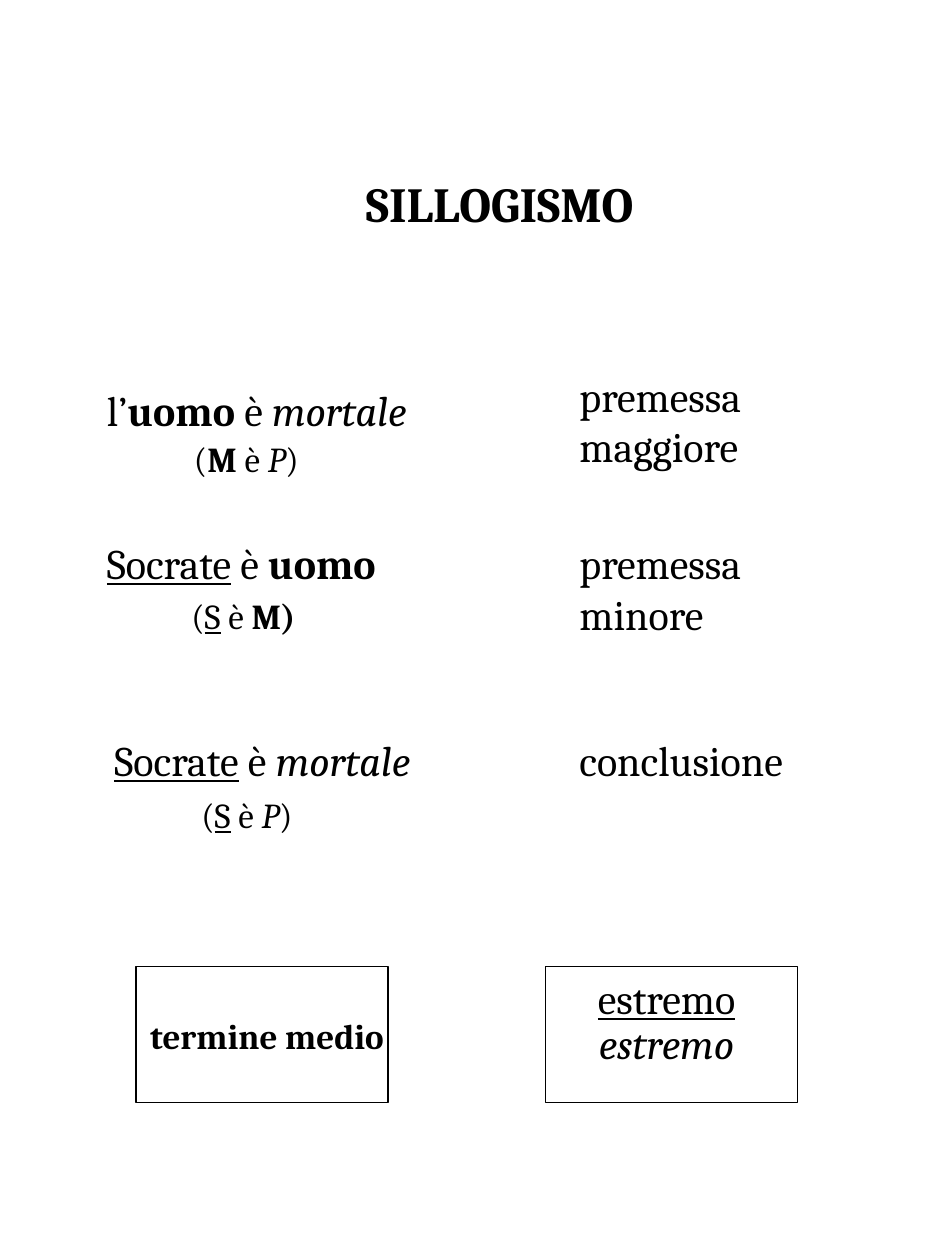
"""Build a one-page Italian slide that explains the syllogism."""
from dataclasses import dataclass

from pptx import Presentation
from pptx.dml.color import RGBColor
from pptx.enum.shapes import MSO_SHAPE as Preset
from pptx.enum.text import MSO_ANCHOR as Anchor
from pptx.enum.text import MSO_AUTO_SIZE as AutoSize
from pptx.enum.text import PP_ALIGN as Align
from pptx.util import Inches, Pt

FONT = "Cambria"
BLACK, WHITE = "000000", "FFFFFF"
LABEL_LEFT = 4.5
FRAME_TOP, FRAME_WIDTH, FRAME_HEIGHT = 7.67, 2, 1.08


@dataclass(frozen=True)
class Piece:
    text: str
    bold: bool = False
    italic: bool = False
    underline: bool = False


@dataclass(frozen=True)
class Caption:
    left: float
    top: float
    width: float
    height: float
    lines: tuple[tuple[Piece, ...], ...]
    size: int = 24
    align: Align = Align.LEFT


def middle(text: str) -> Piece:
    return Piece(text, bold=True)


def predicate(text: str) -> Piece:
    return Piece(text, italic=True)


def subject(text: str) -> Piece:
    return Piece(text, underline=True)


IS, OPEN, CLOSE = Piece(" è "), Piece("("), Piece(")")

TITLE = Caption(1.62, 1.33, 4.69, 0.57, ((middle("SILLOGISMO"),),), 28, Align.CENTER)

STATEMENTS = (
    Caption(0.75, 3, 3.17, 0.5, ((Piece("l’"), middle("uomo"), IS, predicate("mortale")),)),
    Caption(0.75, 4.22, 2.75, 0.5, ((subject("Socrate"), IS, middle("uomo")),)),
    Caption(0.81, 5.78, 2.69, 0.5, ((subject("Socrate"), IS, predicate("mortale")),)),
)

LABELS = (
    Caption(LABEL_LEFT, 2.89, 2.31, 0.9, ((Piece("premessa maggiore"),),)),
    Caption(LABEL_LEFT, 4.22, 2.12, 0.9, ((Piece("premessa minore"),),)),
    Caption(LABEL_LEFT, 5.78, 2.12, 0.5, ((Piece("conclusione"),),)),
)

FORMULAS = (
    Caption(0.83, 3.42, 2.25, 0.43, ((OPEN, middle("M"), IS, predicate("P"), CLOSE),), 20, Align.CENTER),
    Caption(1.42, 4.67, 1.25, 0.43, ((OPEN, subject("S"), IS, middle("M)")),), 20),
    Caption(1.25, 6.25, 1.42, 0.43, ((OPEN, subject("S"), IS, predicate("P"), CLOSE),), 20, Align.CENTER),
)

EXTREMES = Caption(
    3.83, 7.67, 2.92, 0.82, ((subject("estremo"),), (predicate("estremo"),)), align=Align.CENTER
)
MIDDLE_TERM = Caption(0.83, 8, 2.58, 0.43, ((middle("termine medio"),),), 20, Align.CENTER)


def color(value: str) -> RGBColor:
    return RGBColor.from_string(value)


def write_caption(shape, caption: Caption) -> None:
    shape.left, shape.top = Inches(caption.left), Inches(caption.top)
    shape.width, shape.height = Inches(caption.width), Inches(caption.height)
    frame = shape.text_frame
    frame.word_wrap = True
    frame.auto_size = AutoSize.SHAPE_TO_FIT_TEXT
    frame.vertical_anchor = Anchor.TOP
    for index, line in enumerate(caption.lines):
        paragraph = frame.add_paragraph() if index else frame.paragraphs[0]
        paragraph.alignment = caption.align
        if index:
            paragraph.line_spacing = 0.3
            paragraph.space_before = Pt(14)
        for piece in line:
            run = paragraph.add_run()
            run.text = piece.text
            font = run.font
            font.name, font.size = FONT, Pt(caption.size)
            font.color.rgb = color(BLACK)
            font.bold, font.italic = piece.bold, piece.italic
            font.underline = piece.underline


def add_caption(slide, caption: Caption) -> None:
    box = slide.shapes.add_textbox(0, 0, Inches(caption.width), Inches(caption.height))
    write_caption(box, caption)


def add_frame(slide, left: float) -> None:
    frame = slide.shapes.add_shape(
        Preset.RECTANGLE, Inches(left), Inches(FRAME_TOP), Inches(FRAME_WIDTH), Inches(FRAME_HEIGHT)
    )
    frame.shadow.inherit = False
    frame.fill.solid()
    frame.fill.fore_color.rgb = color(WHITE)
    frame.line.color.rgb = color(BLACK)
    frame.line.width = Pt(0.75)


def main() -> None:
    presentation = Presentation()
    presentation.slide_width, presentation.slide_height = Inches(7.5), Inches(10)
    slide = presentation.slides.add_slide(presentation.slide_layouts.get_by_name("Title Only"))
    write_caption(slide.shapes.title, TITLE)
    for caption in STATEMENTS + LABELS:
        add_caption(slide, caption)
    for left, caption in ((4.33, EXTREMES), (1.08, MIDDLE_TERM)):
        add_frame(slide, left)
        add_caption(slide, caption)
    for caption in FORMULAS:
        add_caption(slide, caption)
    presentation.save("out.pptx")


if __name__ == "__main__":
    main()
